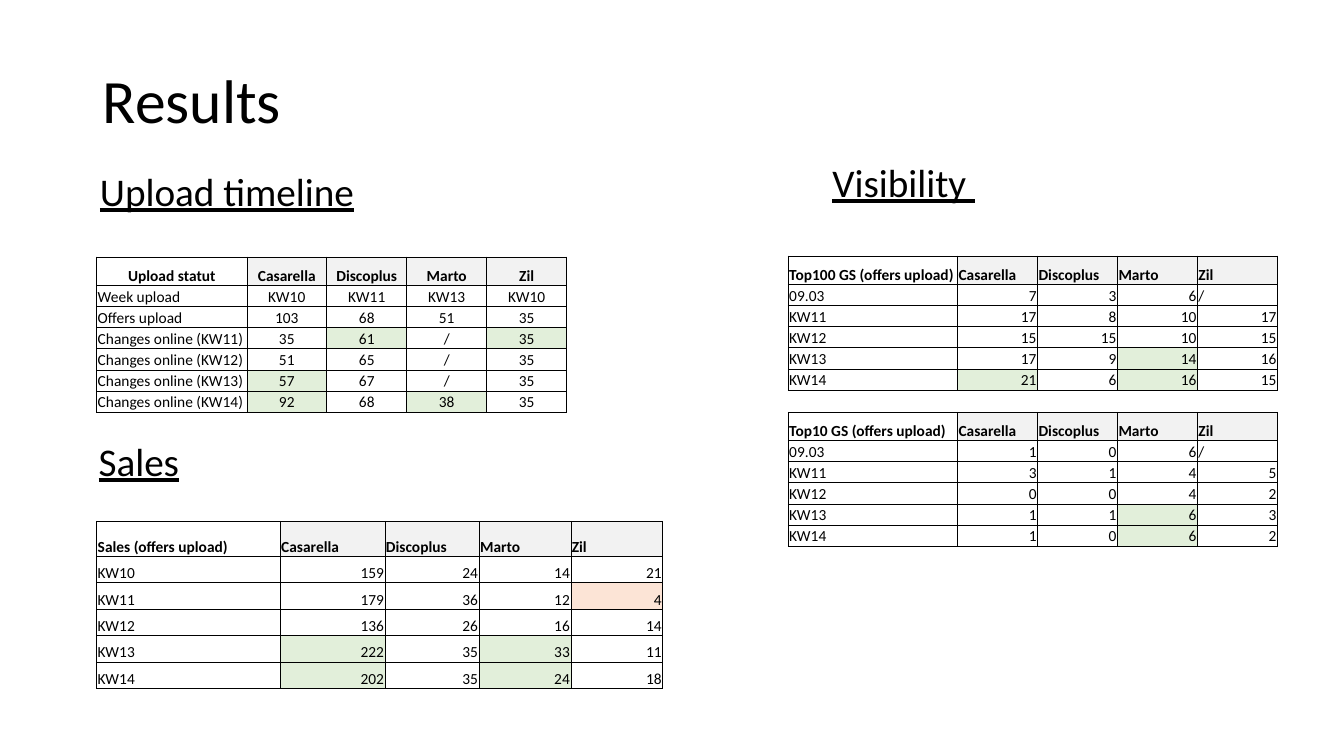
from dataclasses import dataclass

from lxml import etree
from pptx import Presentation, util as u
from pptx.dml.color import RGBColor
from pptx.enum import text
from pptx.oxml.ns import qn

LEFT, CENTER, RIGHT = text.PP_ALIGN.LEFT, text.PP_ALIGN.CENTER, text.PP_ALIGN.RIGHT


@dataclass(frozen=True)
class Theme:
    font: str = "Calibri"
    ink: str = "000000"
    header: str = "F2F2F2"
    good: str = "E2EFDA"
    bad: str = "FCE4D6"
    title_size: int = 44
    heading_size: int = 28
    table_size: int = 11
    border: float = 0.5
    heading_indent: float = 0.12


class Deck:
    """Places elements by percentages of the slide's width and height."""

    def __init__(self, theme):
        self.theme = theme
        self.file = Presentation()
        self.file.slide_width, self.file.slide_height = u.Inches(13.333), u.Inches(7.5)
        self.slide = self.file.slides.add_slide(self.file.slide_layouts[5])

    def across(self, share):
        return round(self.file.slide_width * share / 100)

    def down(self, share):
        return round(self.file.slide_height * share / 100)

    def area(self, left, top, width, height):
        return self.across(left), self.down(top), self.across(width), self.down(height)

    def add_words(self, paragraph, words, size, align=LEFT, bold=False, underline=False):
        paragraph.alignment = align
        run = paragraph.add_run()
        run.text = words
        font = run.font
        font.name, font.size = self.theme.font, u.Pt(size)
        font.bold, font.underline = bold, underline
        font.color.rgb = RGBColor.from_string(self.theme.ink)

    def title(self, words, *area):
        holder = self.slide.shapes.title
        holder.left, holder.top, holder.width, holder.height = self.area(*area)
        frame = holder.text_frame
        frame.vertical_anchor = text.MSO_ANCHOR.MIDDLE
        frame.paragraphs[0].line_spacing = 0.9
        self.add_words(frame.paragraphs[0], words, self.theme.title_size)

    def heading(self, words, *area):
        frame = self.slide.shapes.add_textbox(*self.area(*area)).text_frame
        frame.word_wrap = True
        paragraph = frame.paragraphs[0]
        paragraph.line_spacing, paragraph.space_before = 0.9, u.Pt(10)
        properties = paragraph._p.get_or_add_pPr()
        properties.set("marL", str(u.Inches(self.theme.heading_indent)))
        properties.set("indent", "0")
        self.add_words(paragraph, words, self.theme.heading_size, underline=True)

    def outline(self, cell):
        properties = cell._tc.get_or_add_tcPr()
        for place, side in enumerate(("lnL", "lnR", "lnT", "lnB")):
            line = etree.Element(qn(f"a:{side}"), w=str(u.Pt(self.theme.border)))
            fill = etree.SubElement(line, qn("a:solidFill"))
            etree.SubElement(fill, qn("a:srgbClr"), val=self.theme.ink)
            properties.insert(place, line)

    def cell(self, cell, words, align, bold, fill):
        cell.margin_left = cell.margin_top = cell.margin_right = u.Inches(0.01)
        cell.margin_bottom = 0
        cell.vertical_anchor = text.MSO_ANCHOR.BOTTOM
        self.add_words(cell.text_frame.paragraphs[0], words, self.theme.table_size, align, bold)
        if fill:
            cell.fill.solid()
            cell.fill.fore_color.rgb = RGBColor.from_string(fill)
        else:
            cell.fill.background()
        self.outline(cell)

    def table(self, left, top, columns, header_row, body_row, rows, marks, centered=False):
        """Draw rows of text; marks maps (row, column) to a highlight colour."""
        heights = [header_row] + [body_row] * (len(rows) - 1)
        area = self.area(left, top, sum(columns), sum(heights))
        grid = self.slide.shapes.add_table(len(rows), len(columns), *area).table
        grid.first_row = grid.horz_banding = False
        for column, width in zip(grid.columns, columns):
            column.width = self.across(width)
        for row, height in zip(grid.rows, heights):
            row.height = self.down(height)
        for r, values in enumerate(rows):
            for c, words in enumerate(values):
                if centered and (r == 0 or c > 0):
                    align = CENTER
                else:
                    align = RIGHT if r and c and words.isdigit() else LEFT
                fill = self.theme.header if r == 0 and c else marks.get((r, c))
                self.cell(grid.cell(r, c), words, align, r == 0, fill)


SHOPS = ["Casarella", "Discoplus", "Marto", "Zil"]
LEFT_EDGE, RIGHT_EDGE = 7.2, 58.65
SHOP_COLUMNS = [5.95] * len(SHOPS)
HEADER_ROW, BODY_ROW = 3.73, 2.8

UPLOADS = [
    ["Upload statut", *SHOPS],
    ["Week upload", "KW10", "KW11", "KW13", "KW10"],
    ["Offers upload", "103", "68", "51", "35"],
    ["Changes online (KW11)", "35", "61", "/", "35"],
    ["Changes online (KW12)", "51", "65", "/", "35"],
    ["Changes online (KW13)", "57", "67", "/", "35"],
    ["Changes online (KW14)", "92", "68", "38", "35"],
]
SALES = [
    ["Sales (offers upload)", *SHOPS],
    ["KW10", "159", "24", "14", "21"],
    ["KW11", "179", "36", "12", "4"],
    ["KW12", "136", "26", "16", "14"],
    ["KW13", "222", "35", "33", "11"],
    ["KW14", "202", "35", "24", "18"],
]
TOP_100 = [
    ["Top100 GS (offers upload)", *SHOPS],
    ["09.03", "7", "3", "6", "/"],
    ["KW11", "17", "8", "10", "17"],
    ["KW12", "15", "15", "10", "15"],
    ["KW13", "17", "9", "14", "16"],
    ["KW14", "21", "6", "16", "15"],
]
TOP_10 = [
    ["Top10 GS (offers upload)", *SHOPS],
    ["09.03", "1", "0", "6", "/"],
    ["KW11", "3", "1", "4", "5"],
    ["KW12", "0", "0", "4", "2"],
    ["KW13", "1", "1", "6", "3"],
    ["KW14", "1", "0", "6", "2"],
]


def main():
    theme = Theme()
    deck = Deck(theme)

    def good(*cells):
        return dict.fromkeys(cells, theme.good)

    deck.title("Results", 6.9, 5.33, 86.25, 16.8)
    deck.heading("Visibility ", 60.3, 20.93, 14.6, 10.53)
    deck.heading("Sales", 5.7, 57.87, 8.7, 9.33)
    deck.heading("Upload timeline", 5.8, 22.13, 22.3, 10.53)

    deck.table(LEFT_EDGE, 34, [11.17, *SHOP_COLUMNS], HEADER_ROW, BODY_ROW, UPLOADS,
               good((3, 2), (3, 4), (5, 1), (6, 1), (6, 3)), centered=True)
    deck.table(LEFT_EDGE, 68.93, [13.65, 7.8, 7, 6.83, 6.83], 4.67, 3.5, SALES,
               good((4, 1), (4, 3), (5, 1), (5, 3)) | {(2, 4): theme.bad})
    for top, rows, marks in (
        (33.87, TOP_100, good((4, 3), (5, 1), (5, 3))),
        (54.53, TOP_10, good((4, 3), (5, 3))),
    ):
        deck.table(RIGHT_EDGE, top, [12.6, *SHOP_COLUMNS], HEADER_ROW, BODY_ROW, rows, marks)

    deck.file.save("out.pptx")


if __name__ == "__main__":
    main()
